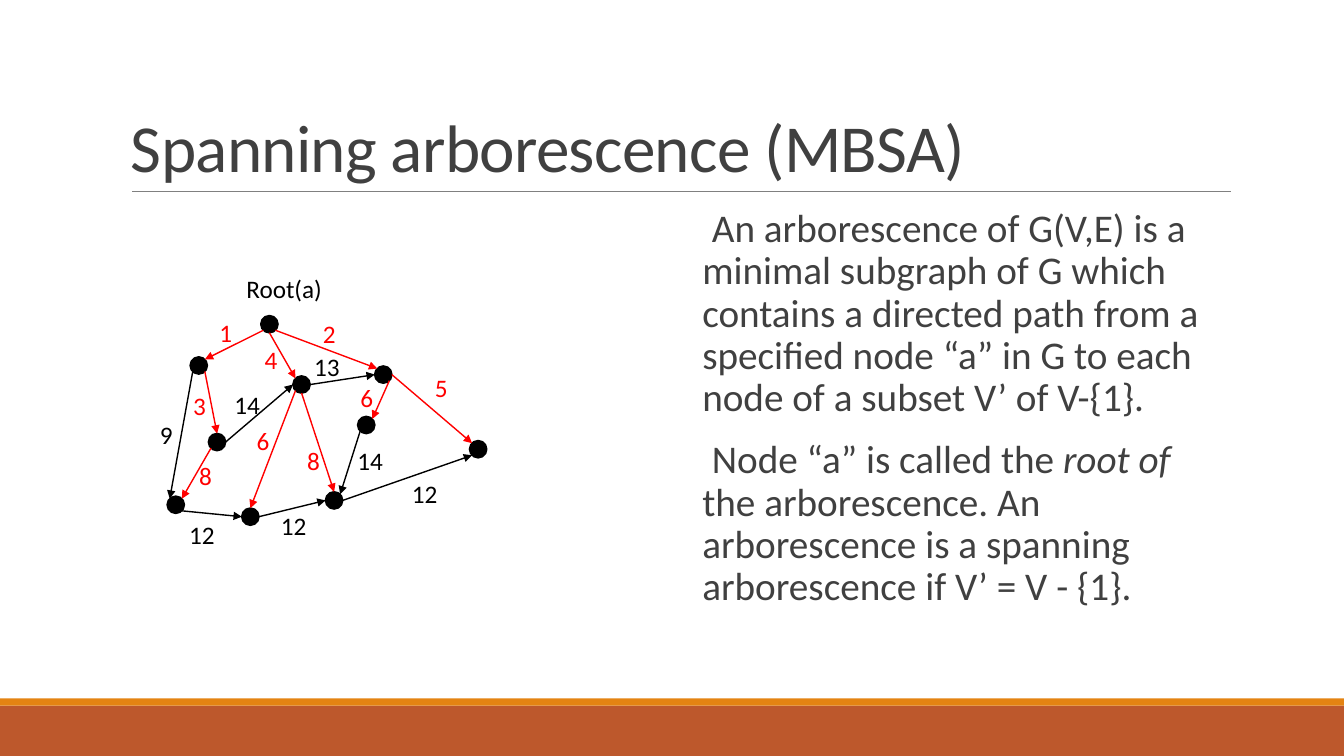
from math import cos, radians, sin

from lxml import etree
from pptx import Presentation
from pptx.dml.color import RGBColor
from pptx.enum.shapes import MSO_CONNECTOR, MSO_SHAPE
from pptx.enum.text import MSO_ANCHOR, MSO_AUTO_SIZE
from pptx.oxml.ns import qn
from pptx.util import Cm, Pt

BLANK_LAYOUT = 6
RECTANGLE, OVAL = MSO_SHAPE.RECTANGLE, MSO_SHAPE.OVAL
STRAIGHT = MSO_CONNECTOR.STRAIGHT
BOTTOM, TOP = MSO_ANCHOR.BOTTOM, MSO_ANCHOR.TOP
FIT_TEXT = MSO_AUTO_SIZE.SHAPE_TO_FIT_TEXT

COLOURS = {"text": "404040", "rule": "808080", "footer": "BD582C",
           "accent": "E48312", "tree": "FF0000", "graph": "000000"}
FONT = "Calibri"
SLIDE_WIDTH, SLIDE_HEIGHT = 33.87, 19.05

# Boxes: left, top, width, height in cm
FOOTER_BOX = (0, 17.6, SLIDE_WIDTH, 1.45)
TITLE_BOX = (3.05, 0.79, 27.94, 4.04)
BODY_BOX = (17.45, 5.13, 13.54, 11.18)
GRAPH_BOX = (3.78, 6.76, 8.5, 7.2)

BODY = [
    [("An arborescence of G(V,E) is a minimal subgraph of G which contains a "
      "directed path from a specified node “a” in G to each node of a subset "
      "V’ of V-{1}.", False)],
    [("Node “a” is called the ", False), ("root of ", True),
     ("the arborescence. An arborescence is a spanning arborescence if "
      "V’ = V - {1}.", False)],
]

# Graph: node centres in cm from the corner of its box
NODE_SIZE = 0.43
NODES = {"a": (3.01, 1.41), "b": (1.23, 2.45), "c": (3.82, 2.93),
         "d": (1.69, 4.38), "e": (5.88, 2.68), "f": (5.45, 3.95),
         "g": (2.53, 6.26), "h": (0.65, 5.96), "i": (4.64, 5.85),
         "j": (8.27, 4.56)}
SIDES = {side: radians(45 * step) for step, side in
         enumerate(["E", "SE", "S", "SW", "W", "NW", "N", "NE"])}
# Start, side, end, side, weight, place of the weight
EDGES = {
    "tree": [
        ("a", "SW", "b", "NE", "1", (1.5, 1.12)),
        ("a", "S", "c", "NW", "4", (2.64, 1.8)),
        ("a", "SE", "e", "NW", "2", (4.11, 1.14)),
        ("e", "SE", "f", "NE", "6", (5.05, 2.74)),
        ("e", "E", "j", "NW", "5", (6.93, 2.49)),
        ("c", "S", "i", "N", "8", (3.71, 4.34)),
        ("b", "SE", "d", "N", "3", (0.84, 2.95)),
        ("c", "SW", "g", "N", "6", (2.44, 3.84)),
        ("d", "SW", "h", "NE", "8", (0.99, 4.72)),
    ],
    "graph": [
        ("d", "E", "c", "W", "14", (1.88, 2.92)),
        ("h", "SE", "g", "W", "12", (0.74, 6.2)),
        ("c", "E", "e", "W", "13", (3.89, 1.98)),
        ("b", "SW", "h", "NW", "9", (0, 3.68)),
        ("i", "E", "j", "SW", "12", (6.35, 5.16)),
        ("f", "SW", "i", "NE", "14", (4.98, 4.34)),
        ("g", "E", "i", "W", "12", (3.05, 5.97)),
    ],
}


def colour(name):
    return RGBColor.from_string(COLOURS[name])


def set_attributes(target, values):
    for name, value in values.items():
        setattr(target, name, value)


def add_filled(slide, kind, box, fill):
    shape = slide.shapes.add_shape(kind, *map(Cm, box))
    shape.shadow.inherit = False
    shape.fill.solid()
    shape.fill.fore_color.rgb = colour(fill)
    shape.line.fill.background()
    return shape


def add_line(slide, start, end, line_colour, width, arrow=False):
    connector = slide.shapes.add_connector(STRAIGHT, *map(Cm, (*start, *end)))
    connector.line.color.rgb = colour(line_colour)
    connector.line.width = Pt(width)
    properties = connector.element.spPr
    if arrow:
        outline = properties.find(qn("a:ln"))
        etree.SubElement(outline, qn("a:tailEnd"), type="triangle")
    etree.SubElement(properties, qn("a:effectLst"))


def add_frame(slide, box, **values):
    frame = slide.shapes.add_textbox(*map(Cm, box)).text_frame
    set_attributes(frame, values)
    return frame


def add_run(paragraph, text, size, text_colour, italic=False):
    run = paragraph.add_run()
    run.text = text
    set_attributes(run.font, {"name": FONT, "size": Pt(size), "italic": italic})
    run.font.color.rgb = colour(text_colour)
    return run


def add_footer(slide, box):
    left, top, width, height = box
    stripe = 0.18
    add_filled(slide, RECTANGLE, (left, top + stripe, width, height - stripe), "footer")
    add_filled(slide, RECTANGLE, (left, top, width, stripe), "accent")


def add_title(slide, box):
    left, top, width, height = box
    bottom = top + height
    add_line(slide, (left + 0.28, bottom), (left + width + 0.02, bottom), "rule", 0.5)
    frame = add_frame(slide, box, word_wrap=True, vertical_anchor=BOTTOM)
    paragraph = frame.paragraphs[0]
    paragraph.line_spacing = 0.85
    run = add_run(paragraph, "Spanning arborescence (MBSA)", 48, "text")
    run.font._element.set("spc", "-50")


def add_body(slide, box):
    frame = add_frame(slide, box, word_wrap=True, vertical_anchor=TOP,
                      margin_left=0, margin_right=0)
    for index, runs in enumerate(BODY):
        paragraph = frame.add_paragraph() if index else frame.paragraphs[0]
        set_attributes(paragraph, {"line_spacing": 0.9, "space_before": Pt(12),
                                   "space_after": Pt(2)})
        # Blank bullet with a hanging indent
        properties = paragraph._p.get_or_add_pPr()
        properties.set("marL", str(Cm(0.25)))
        properties.set("indent", str(Cm(-0.25)))
        etree.SubElement(properties, qn("a:buChar"), char=" ")
        for text, italic in runs:
            add_run(paragraph, text, 28, "text", italic)


def add_label(slide, origin, place, text, text_colour, width):
    box = (origin[0] + place[0], origin[1] + place[1], width, 1.02)
    frame = add_frame(slide, box, word_wrap=False, auto_size=FIT_TEXT)
    add_run(frame.paragraphs[0], text, 18, text_colour)


def add_graph(slide, box):
    origin = left, top = box[:2]
    radius = NODE_SIZE / 2

    def side_point(node, side):
        x, y = NODES[node]
        angle = SIDES[side]
        return left + x + radius * cos(angle), top + y + radius * sin(angle)

    for x, y in NODES.values():
        node = add_filled(slide, OVAL, (left + x - radius, top + y - radius,
                                        NODE_SIZE, NODE_SIZE), "graph")
        node.line.color.rgb = colour("graph")
        node.line.width = Pt(1.25)

    for edge_colour, edges in EDGES.items():
        for start, start_side, end, end_side, weight, place in edges:
            add_line(slide, side_point(start, start_side),
                     side_point(end, end_side), edge_colour, 1, arrow=True)
            add_label(slide, origin, place, weight, edge_colour,
                      0.51 + 0.33 * len(weight))
    add_label(slide, origin, (2.18, 0), "Root(a)", "graph", 2.44)


def main():
    presentation = Presentation()
    presentation.slide_width = Cm(SLIDE_WIDTH)
    presentation.slide_height = Cm(SLIDE_HEIGHT)
    slide = presentation.slides.add_slide(presentation.slide_layouts[BLANK_LAYOUT])
    add_footer(slide, FOOTER_BOX)
    add_title(slide, TITLE_BOX)
    add_body(slide, BODY_BOX)
    add_graph(slide, GRAPH_BOX)
    presentation.save("out.pptx")


if __name__ == "__main__":
    main()
